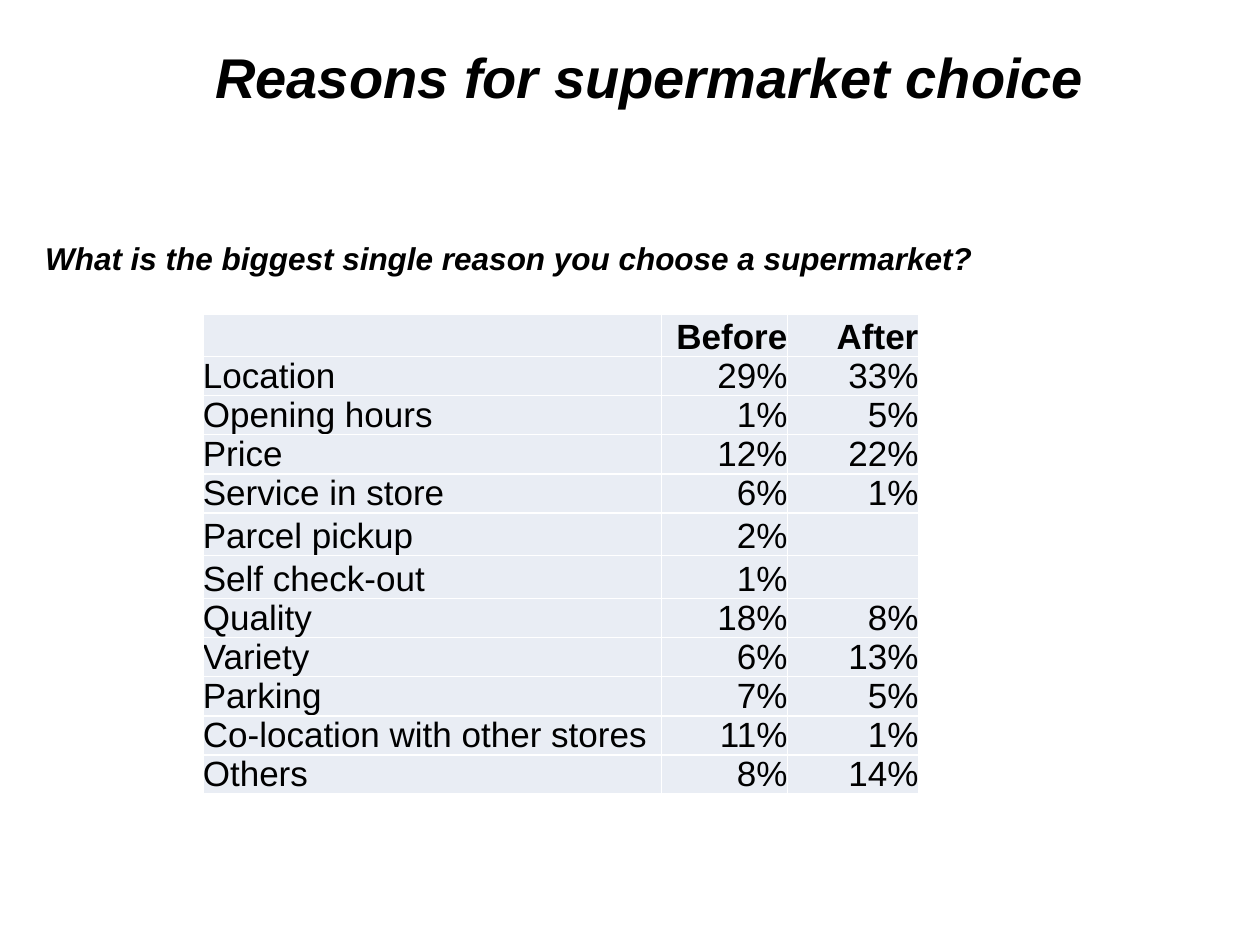
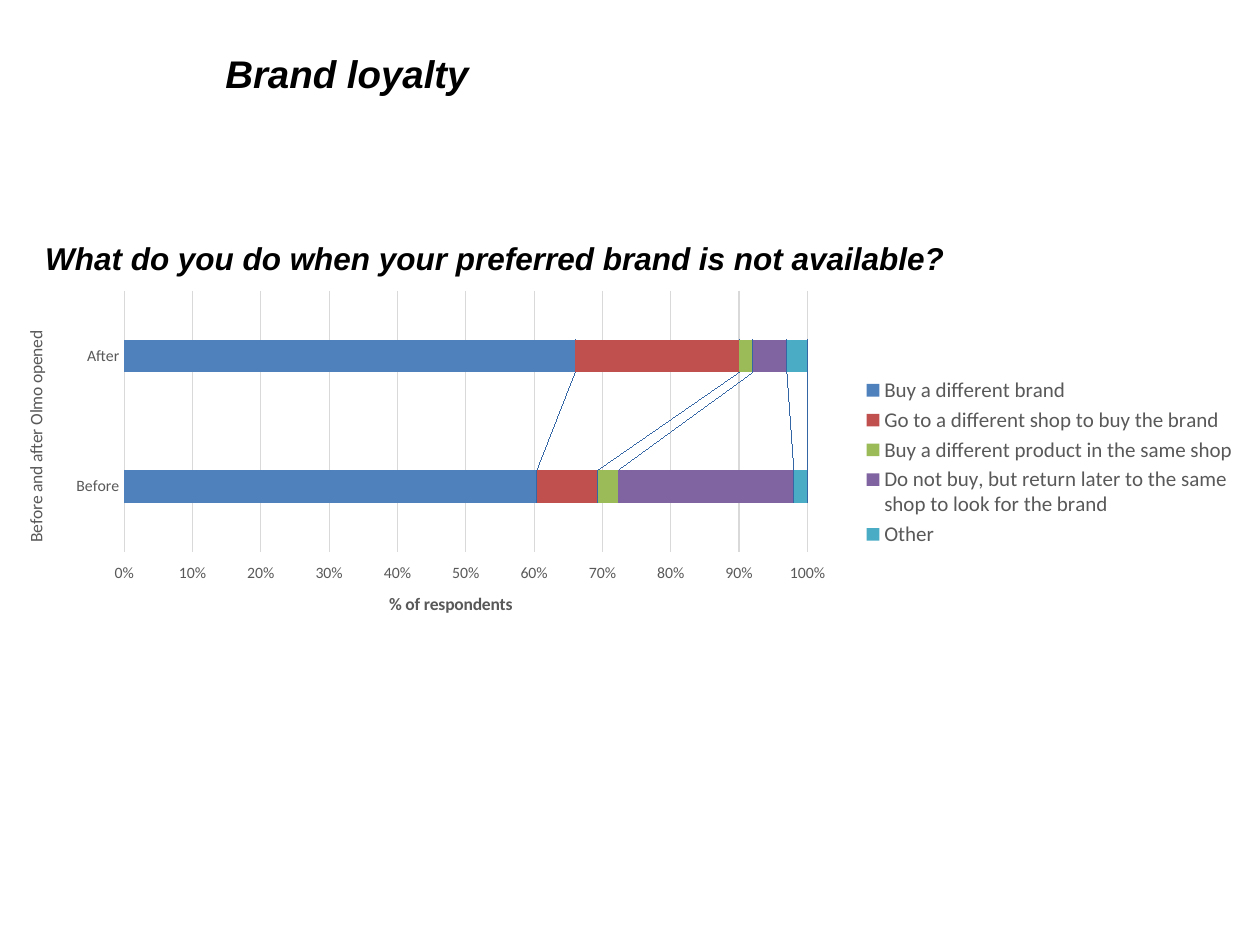
import pptx
import pptx.chart.data
import pptx.dml.color
import pptx.enum.chart
import pptx.enum.text
import pptx.oxml
import pptx.oxml.ns
import pptx.util


class Theme:
    head, body = "Arial", "Calibri"
    ink, grey, rule, cell, white = "000000", "595959", "D9D9D9", "E9EDF4", "FFFFFF"
    hues = ["4F81BD", "C0504D", "9BBB59", "8064A2", "4BACC6"]
    title, short, ask, grid, label, name, key = 32, 22, 18, 20, 9, 10, 12


WIDE, HIGH = pptx.util.Inches(10), pptx.util.Inches(7.5)
COLS, ROWS = 100, 75
ALIGN = pptx.enum.text.PP_ALIGN
XL = pptx.enum.chart
ASK_TOP, ASK_LEFT = 18.5, 2.6


def tint(hue):
    return pptx.dml.color.RGBColor.from_string(hue)


def assign(item, **vals):
    for key, val in vals.items():
        setattr(item, key, val)


def style(font, size, hue=Theme.ink, face=Theme.head, bold=False, italic=False):
    assign(font, size=pptx.util.Pt(size), name=face, bold=bold, italic=italic)
    font.color.rgb = tint(hue)


def node(tag, inner=""):
    return pptx.oxml.parse_xml(
        f'<{tag} {pptx.oxml.ns.nsdecls("a", "c")}>{inner}</{tag}>')


def solid(hue):
    return f'<a:solidFill><a:srgbClr val="{hue}"/></a:solidFill>'


class Deck:
    def __init__(self):
        self.file = pptx.Presentation()
        assign(self.file, slide_width=WIDE, slide_height=HIGH)
        self.slide = None

    def page(self):
        self.slide = self.file.slides.add_slide(self.file.slide_layouts[6])

    def span(self, *cells):
        """Turn left, top, width, height in grid cells into lengths."""
        steps = (WIDE / COLS, HIGH / ROWS) * 2
        return [int(cell * step) for cell, step in zip(cells, steps)]

    def text(self, words, size, *place):
        frame = self.slide.shapes.add_textbox(*self.span(*place)).text_frame
        assign(frame, word_wrap=False, text=words,
               auto_size=pptx.enum.text.MSO_AUTO_SIZE.SHAPE_TO_FIT_TEXT)
        style(frame.paragraphs[0].runs[0].font, size, bold=True, italic=True)

    def ask(self, words, width):
        self.text(words, Theme.ask, ASK_LEFT, ASK_TOP, width, 4)

    def table(self, data, left, top, widths, highs):
        place = self.span(left, top, sum(widths), sum(highs))
        table = self.slide.shapes.add_table(len(data), len(widths), *place).table
        assign(table, first_row=False, horz_banding=False)
        for col, width in zip(table.columns, widths):
            col.width = self.span(width)[0]
        for row, high in zip(table.rows, highs):
            row.height = self.span(0, high)[1]
        for r, line in enumerate(data):
            for c, words in enumerate(line):
                self.cell(table.cell(r, c), words, bold=r == 0, right=c > 0)

    def cell(self, cell, words, bold, right):
        assign(cell, text=words, margin_left=0, margin_right=0, margin_top=0,
               margin_bottom=0, vertical_anchor=pptx.enum.text.MSO_ANCHOR.BOTTOM)
        props = cell._tc.get_or_add_tcPr()
        for side in "LRTB":
            edge = node(f"a:ln{side}", solid(Theme.white))
            edge.set("w", str(pptx.util.Pt(1)))
            props.append(edge)
        cell.fill.solid()
        cell.fill.fore_color.rgb = tint(Theme.cell)
        para = cell.text_frame.paragraphs[0]
        para.alignment = ALIGN.RIGHT if right else ALIGN.LEFT
        style(para.font, Theme.grid, bold=bold)
        for run in para.runs:
            style(run.font, Theme.grid, bold=bold)

    def axis(self, axis, words, tick, bold=False):
        assign(axis, major_tick_mark=tick, minor_tick_mark=XL.XL_TICK_MARK.NONE)
        style(axis.tick_labels.font, Theme.label, Theme.grey, Theme.body)
        frame = axis.axis_title.text_frame
        frame.text = words
        style(frame.paragraphs[0].runs[0].font, Theme.name, Theme.grey, Theme.body, bold)
        return frame

    def line(self, form, hue):
        form.line.color.rgb = tint(hue)
        form.line.width = pptx.util.Pt(0.75)

    def layout(self, host, spot, inner=False):
        """Fix a chart part at x, y, w, h as shares of the chart."""
        rules = '<c:layoutTarget val="inner"/>' if inner else ""
        rules += '<c:xMode val="edge"/><c:yMode val="edge"/>'
        rules += "".join(f'<c:{k} val="{v}"/>' for k, v in zip("xywh", spot))
        for old in host.findall(pptx.oxml.ns.qn("c:layout")):
            host.remove(old)
        part = node("c:layout", f"<c:manualLayout>{rules}</c:manualLayout>")
        host.insert(0 if inner else 1, part)

    def bars(self, cats, rows, names, *place):
        data = pptx.chart.data.CategoryChartData()
        data.categories = cats
        for name, vals in rows:
            data.add_series(name, vals)
        chart = self.slide.shapes.add_chart(
            XL.XL_CHART_TYPE.BAR_STACKED_100, *self.span(*place), data).chart
        assign(chart, has_title=False, has_legend=True)
        style(chart.font, Theme.name, face=Theme.body)

        # Bars and the lines that join them
        plot = chart.plots[0]
        assign(plot, gap_width=300, overlap=100, vary_by_categories=False)
        for bar, hue in zip(plot.series, Theme.hues):
            bar.format.fill.solid()
            bar.format.fill.fore_color.rgb = tint(hue)
        group = chart._chartSpace.find(".//" + pptx.oxml.ns.qn("c:barChart"))
        group.find(pptx.oxml.ns.qn("c:overlap")).addnext(node("c:serLines"))

        # Axes
        cat, val = chart.category_axis, chart.value_axis
        frame = self.axis(cat, names[0], XL.XL_TICK_MARK.NONE)
        frame._txBody.bodyPr.set("rot", "-5400000")
        self.line(cat.format, Theme.rule)
        self.axis(val, names[1], XL.XL_TICK_MARK.OUTSIDE, bold=True)
        val.format.line.fill.background()
        self.line(val.major_gridlines.format, Theme.rule)
        assign(val.tick_labels, number_format="0%", number_format_is_linked=False)

        # Legend and plot area
        assign(chart.legend, position=XL.XL_LEGEND_POSITION.RIGHT,
               include_in_layout=False)
        style(chart.legend.font, Theme.key, Theme.grey, Theme.body)
        self.layout(chart.legend._element, (0.69, 0.25, 0.31, 0.5))
        area = chart._chartSpace.find(".//" + pptx.oxml.ns.qn("c:plotArea"))
        self.layout(area, (0.1, 0.02, 0.55, 0.73), inner=True)


REASONS = [
    ("", "Before", "After"),
    ("Location", "29%", "33%"),
    ("Opening hours", "1%", "5%"),
    ("Price", "12%", "22%"),
    ("Service in store", "6%", "1%"),
    ("Parcel pickup", "2%", ""),
    ("Self check-out", "1%", ""),
    ("Quality", "18%", "8%"),
    ("Variety", "6%", "13%"),
    ("Parking", "7%", "5%"),
    ("Co-location with other stores", "11%", "1%"),
    ("Others", "8%", "14%"),
]
ACTIONS = [
    ("Buy a different brand", (61, 66)),
    ("Go to a different shop to buy the brand", (9, 24)),
    ("Buy a different product in the same shop", (3, 2)),
    ("Do not buy, but return later to the same shop to look for the brand", (26, 5)),
    ("Other", (2, 3)),
]


def main():
    deck = Deck()

    # Reasons table: rows with a blank cell stand a little taller
    deck.page()
    highs = [3.4 if "" in row else 3.1 for row in REASONS]
    deck.table(REASONS, 16.1, 24.9, (36.4, 10, 10.4), highs)
    deck.ask("What is the biggest single reason you choose a supermarket?", 77.3)
    deck.text("Reasons for supermarket choice", Theme.title, 16.1, 2.9, 71.5, 6.4)

    # Loyalty chart
    deck.page()
    names = "Before and after Olmo opened", "% of respondents"
    deck.bars(("Before", "After"), ACTIONS, names, 0, 22.5, 98.6, 28.4)
    deck.ask("What do you do when your preferred brand is not available?", 74.1)
    deck.text("Brand loyalty", Theme.short, 16.9, 3.5, 21.6, 4.7)

    deck.file.save("out.pptx")


if __name__ == "__main__":
    main()
